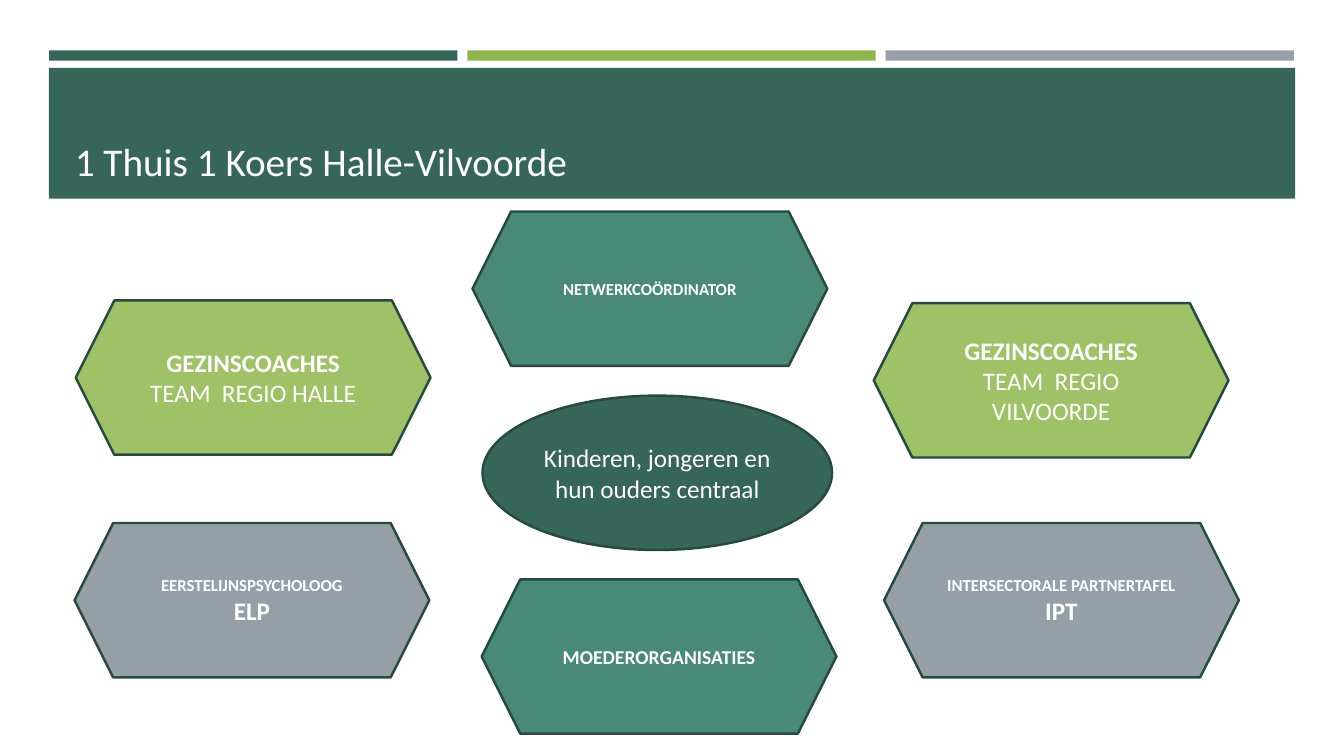
from dataclasses import dataclass

from pptx import Presentation
from pptx.dml.color import RGBColor
from pptx.enum.shapes import MSO_SHAPE
from pptx.enum.text import MSO_ANCHOR, MSO_AUTO_SIZE, PP_ALIGN
from pptx.shapes.autoshape import Shape
from pptx.slide import Slide
from pptx.text.text import Font
from pptx.util import Cm, Pt

DARK_GREEN = RGBColor(0x36, 0x66, 0x58)
TEAL = RGBColor(0x49, 0x89, 0x77)
LIME = RGBColor(0x8C, 0xB6, 0x4A)
LIGHT_LIME = RGBColor(0x9F, 0xC2, 0x66)
GREY = RGBColor(0x96, 0x9F, 0xA7)
OUTLINE = RGBColor(0x27, 0x4A, 0x40)
WHITE = RGBColor(0xFF, 0xFF, 0xFF)

BAR_LEFT, BAR_TOP, BAR_WIDTH, BAR_HEIGHT, BAR_PITCH = 1.24, 1.27, 10.29, 0.26, 10.54
HEXAGON_WIDTH, ELLIPSE_WIDTH, NODE_HEIGHT = 8.94, 8.81, 3.89


@dataclass(frozen=True)
class Line:
    text: str
    size: int = 18
    bold: bool = True


@dataclass(frozen=True)
class Node:
    left: float
    top: float
    fill: RGBColor
    lines: tuple[Line, ...]
    shape: MSO_SHAPE = MSO_SHAPE.HEXAGON
    width: float = HEXAGON_WIDTH


NODES = (
    Node(1.91, 7.57, LIGHT_LIME,
         (Line("GEZINSCOACHES"), Line("TEAM  REGIO HALLE", bold=False))),
    Node(12.16, 9.97, DARK_GREEN,
         (Line("Kinderen, jongeren en hun ouders centraal", bold=False),),
         MSO_SHAPE.OVAL, ELLIPSE_WIDTH),
    Node(22.02, 7.64, LIGHT_LIME,
         (Line("GEZINSCOACHES"), Line("TEAM  REGIO VILVOORDE", bold=False))),
    Node(12.14, 14.6, TEAL, (Line("MOEDERORGANISATIES", 14),)),
    Node(22.28, 13.18, GREY,
         (Line("INTERSECTORALE PARTNERTAFEL", 12), Line("IPT"))),
    Node(1.88, 13.18, GREY, (Line("EERSTELIJNSPSYCHOLOOG", 12), Line("ELP"))),
    Node(11.91, 5.33, TEAL, (Line("NETWERKCOÖRDINATOR", 12),)),
)


def add_filled(slide: Slide, shape: MSO_SHAPE, left: float, top: float,
               width: float, height: float, fill: RGBColor) -> Shape:
    """Add a solid shape without outline or shadow; lengths in cm."""
    sp = slide.shapes.add_shape(shape, Cm(left), Cm(top), Cm(width), Cm(height))
    sp.shadow.inherit = False
    sp.fill.solid()
    sp.fill.fore_color.rgb = fill
    sp.line.fill.background()
    return sp


def set_font(font: Font, size: int, bold: bool) -> None:
    font.name = "Calibri"
    font.size = Pt(size)
    font.bold = bold
    font.color.rgb = WHITE


def add_header(slide: Slide) -> None:
    for i, fill in enumerate((DARK_GREEN, LIME, GREY)):
        add_filled(slide, MSO_SHAPE.RECTANGLE, BAR_LEFT + i * BAR_PITCH, BAR_TOP,
                   BAR_WIDTH, BAR_HEIGHT, fill)
    band = add_filled(slide, MSO_SHAPE.RECTANGLE, 1.23, 1.71, 31.41, 3.3, DARK_GREEN)

    title = slide.shapes.title
    band.element.addnext(title.element)  # the title lies on top of the band
    title.left, title.top = Cm(1.63), Cm(1.96)
    title.width, title.height = Cm(30.63), Cm(2.82)
    tf = title.text_frame
    tf.text = "1 Thuis 1 Koers Halle-Vilvoorde"
    tf.auto_size = MSO_AUTO_SIZE.NONE
    tf.vertical_anchor = MSO_ANCHOR.BOTTOM
    p = tf.paragraphs[0]
    p.alignment = PP_ALIGN.LEFT
    set_font(p.font, 28, False)


def add_node(slide: Slide, node: Node) -> None:
    sp = add_filled(slide, node.shape, node.left, node.top, node.width,
                    NODE_HEIGHT, node.fill)
    sp.line.color.rgb = OUTLINE
    sp.line.width = Pt(1.75)
    tf = sp.text_frame
    tf.word_wrap = True
    tf.vertical_anchor = MSO_ANCHOR.MIDDLE
    tf.text = "\n".join(line.text for line in node.lines)
    for p, line in zip(tf.paragraphs, node.lines):
        p.alignment = PP_ALIGN.CENTER
        set_font(p.font, line.size, line.bold)


def main() -> None:
    prs = Presentation()
    prs.slide_width, prs.slide_height = Cm(33.87), Cm(19.05)
    slide = prs.slides.add_slide(prs.slide_layouts.get_by_name("Title Only"))
    add_header(slide)
    for node in NODES:
        add_node(slide, node)
    prs.save("out.pptx")


if __name__ == "__main__":
    main()
